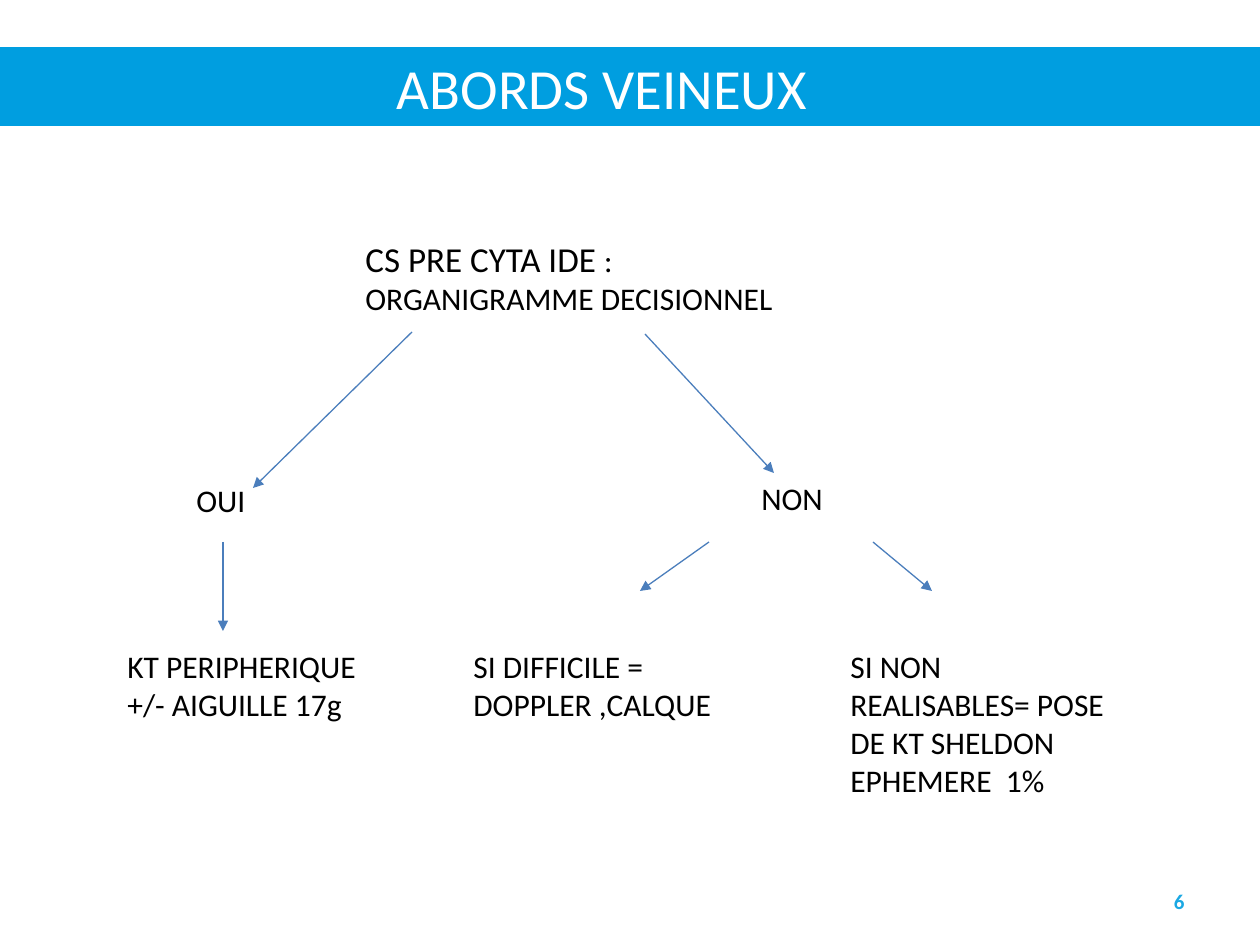
from dataclasses import dataclass

from lxml import etree
from pptx import Presentation
from pptx import util as u
from pptx.dml.color import RGBColor
from pptx.enum import shapes, text
from pptx.oxml.ns import qn

SCALE = u.Inches(1) / 126
FONT = "Calibri"
BLUE, BLACK, WHITE = "009EE0", "000000", "FFFFFF"
ARROW, PAGE = "4B7EBC", "1AA8E3"


@dataclass(frozen=True)
class Box:
    left: int
    top: int
    width: int
    height: int


@dataclass(frozen=True)
class Node:
    box: Box
    lines: tuple


@dataclass(frozen=True)
class Arrow:
    start: tuple
    end: tuple


ROW = 641  # top of the three outcome texts

NODES = [
    Node(Box(353, 231, 486, 131),
         ([("CS PRE CYTA IDE ", 20), (": ORGANIGRAMME DECISIONNEL", 18)],)),
    Node(Box(184, 475, 209, 50), ("OUI",)),
    Node(Box(749, 473, 228, 50), ("NON",)),
    Node(Box(115, ROW, 278, 89), ("KT PERIPHERIQUE", "+/- AIGUILLE 17g")),
    Node(Box(461, ROW, 287, 89), ("SI DIFFICILE = DOPPLER ,CALQUE",)),
    Node(Box(838, ROW, 287, 165),
         ("SI NON REALISABLES= POSE DE KT SHELDON EPHEMERE  1%",)),
]

ARROWS = [
    Arrow((412, 332), (253, 488)),
    Arrow((645, 334), (774, 473)),
    Arrow((223, 542), (223, 631)),
    Arrow((709, 542), (640, 591)),
    Arrow((873, 542), (932, 591)),
]


def px(num: int) -> int:
    return round(num * SCALE)


def rgb(code: str) -> RGBColor:
    return RGBColor.from_string(code)


def place(shape, box: Box) -> None:
    shape.left, shape.top = px(box.left), px(box.top)
    shape.width, shape.height = px(box.width), px(box.height)


def write(shape, *lines, size=18, color=BLACK, bold=False,
          align=text.PP_ALIGN.LEFT, anchor=text.MSO_ANCHOR.TOP) -> None:
    """Fill a shape; each line is a string or a list of (string, size) runs."""
    frame = shape.text_frame
    frame.word_wrap = True
    frame.vertical_anchor = anchor
    for i, line in enumerate(lines):
        para = frame.add_paragraph() if i else frame.paragraphs[0]
        para.alignment = align
        for words, points in [(line, size)] if isinstance(line, str) else line:
            run = para.add_run()
            run.text = words
            font = run.font
            font.name, font.size, font.bold = FONT, u.Pt(points), bold
            font.color.rgb = rgb(color)


def add_text(slide, box: Box, *lines, **style) -> None:
    shape = slide.shapes.add_textbox(0, 0, 0, 0)
    place(shape, box)
    write(shape, *lines, **style)


def add_title(slide) -> None:
    title = slide.shapes.title
    place(title, Box(0, 48, 1260, 77))
    title.fill.solid()
    title.fill.fore_color.rgb = rgb(BLUE)
    title.line.color.rgb = rgb(BLUE)
    title.line.width = u.Pt(0.75)
    write(title, "ABORDS VEINEUX", size=32.4, color=WHITE,
          anchor=text.MSO_ANCHOR.MIDDLE)
    title.text_frame.margin_left = px(397)


def add_arrow(slide, arrow: Arrow) -> None:
    line = slide.shapes.add_connector(
        shapes.MSO_CONNECTOR.STRAIGHT,
        *map(px, arrow.start + arrow.end))
    line.line.color.rgb = rgb(ARROW)
    line.line.width = u.Pt(0.75)
    etree.SubElement(line.line._get_or_add_ln(), qn("a:tailEnd"),
                     type="triangle")
    etree.SubElement(line._element.spPr, qn("a:effectLst"))


def main() -> None:
    deck = Presentation()
    deck.slide_width, deck.slide_height = px(1260), px(945)
    slide = deck.slides.add_slide(deck.slide_layouts[5])
    add_title(slide)
    for node in NODES:
        add_text(slide, node.box, *node.lines)
    for arrow in ARROWS:
        add_arrow(slide, arrow)
    add_text(slide, Box(903, 876, 294, 50), "6", size=12, color=PAGE,
             bold=True, align=text.PP_ALIGN.RIGHT,
             anchor=text.MSO_ANCHOR.MIDDLE)
    deck.save("out.pptx")


if __name__ == "__main__":
    main()
